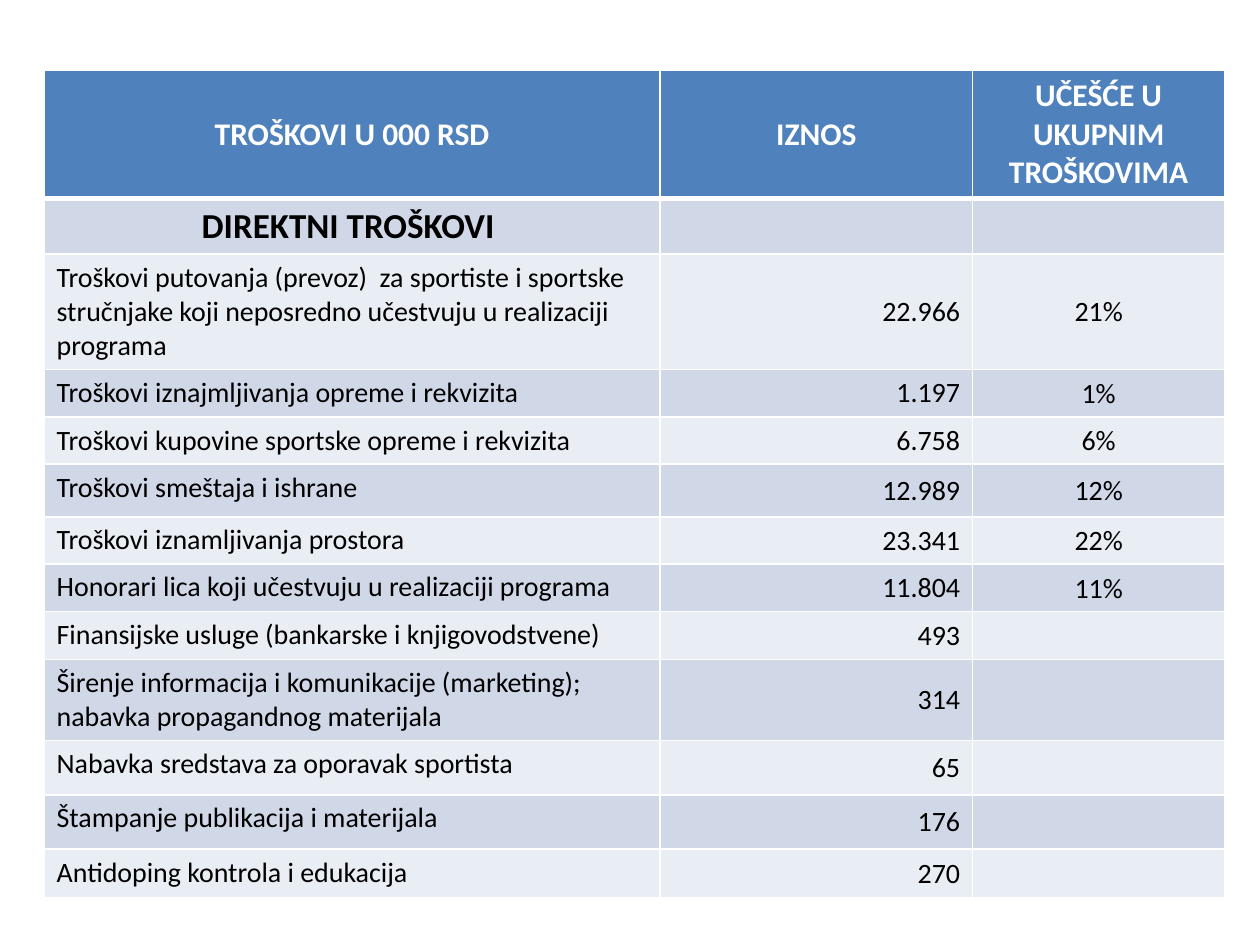
from dataclasses import dataclass

from lxml import etree
from pptx import Presentation
from pptx.dml.color import RGBColor
from pptx.enum.text import MSO_ANCHOR, PP_ALIGN
from pptx.oxml.ns import qn
from pptx.util import Inches, Pt

LEFT, CENTER, RIGHT = PP_ALIGN.LEFT, PP_ALIGN.CENTER, PP_ALIGN.RIGHT
TOP, MIDDLE = MSO_ANCHOR.TOP, MSO_ANCHOR.MIDDLE
BLANK_LAYOUT = 6


@dataclass(frozen=True)
class Theme:
    font: str = "Calibri"
    header_size: int = 18
    section_size: int = 20
    body_size: int = 16
    header_fill: str = "4F81BD"
    bands: tuple = ("D0D8E8", "E9EDF4")
    light: str = "FFFFFF"
    dark: str = "000000"
    border: float = 1
    header_border: float = 3


HEADERS = ["TROŠKOVI U 000 RSD", "IZNOS", "UČEŠĆE U UKUPNIM TROŠKOVIMA"]
SECTION = ["DIREKTNI TROŠKOVI ", "", ""]
COSTS = [
    ["Troškovi putovanja (prevoz)  za sportiste i sportske stručnjake "
     "koji neposredno učestvuju u realizaciji programa", "22.966", "21%"],
    ["Troškovi iznajmljivanja opreme i rekvizita", "1.197", "1%"],
    ["Troškovi kupovine sportske opreme i rekvizita", "6.758", "6%"],
    ["Troškovi smeštaja i ishrane", "12.989", "12%"],
    ["Troškovi iznamljivanja prostora", "23.341", "22%"],
    ["Honorari lica koji učestvuju u realizaciji programa", "11.804", "11%"],
    ["Finansijske usluge (bankarske i knjigovodstvene)", "493", ""],
    ["Širenje informacija i komunikacije (marketing); "
     "nabavka propagandnog materijala", "314", ""],
    ["Nabavka sredstava za oporavak sportista", "65", ""],
    ["Štampanje publikacija i materijala", "176", ""],
    ["Antidoping kontrola i edukacija", "270", ""],
]
COLUMN_WIDTHS = [4.89, 2.48, 2]
ROW_HEIGHTS = [0.95, 0.41, 0.86, 0.38, 0.31, 0.42, 0.35,
               0.38, 0.38, 0.6, 0.43, 0.43, 0.39]


def set_attributes(target, values):
    for name, value in values.items():
        setattr(target, name, value)


class SlideBuilder:
    def __init__(self, slide, theme):
        self.slide = slide
        self.theme = theme

    def add_table(self, rows, left, top, widths, heights):
        frame = self.slide.shapes.add_table(
            len(rows), len(widths), Inches(left), Inches(top),
            Inches(sum(widths)), Inches(sum(heights)))
        table = frame.table
        set_attributes(table, {"first_row": False, "horz_banding": False})
        for column, width in zip(table.columns, widths):
            column.width = Inches(width)
        for row, height in zip(table.rows, heights):
            row.height = Inches(height)
        for row_index, texts in enumerate(rows):
            for column_index, text in enumerate(texts):
                self.format_cell(table.cell(row_index, column_index),
                                 text, row_index, column_index)

    def format_cell(self, cell, text, row, column):
        theme = self.theme
        # Borders come before the fill in the cell properties
        self.add_borders(cell, row)
        cell.fill.solid()
        fill = theme.header_fill if row == 0 else theme.bands[(row - 1) % 2]
        cell.fill.fore_color.rgb = RGBColor.from_string(fill)

        paragraph = cell.text_frame.paragraphs[0]
        if not text:
            # An empty cell must not stretch its row
            etree.SubElement(paragraph._p, qn("a:endParaRPr"),
                             sz=str(theme.body_size * 100))
            return

        size = {0: theme.header_size, 1: theme.section_size}.get(
            row, theme.body_size)
        color = theme.light if row == 0 else theme.dark
        paragraph.alignment = CENTER if row < 2 else (LEFT, RIGHT, CENTER)[column]
        cell.vertical_anchor = MIDDLE if row == 0 or column > 0 else TOP
        if row > 1 and column == 2:
            set_attributes(cell, {
                "margin_left": Inches(0.01), "margin_right": Inches(0.01),
                "margin_top": Inches(0.01), "margin_bottom": 0})
        run = paragraph.add_run()
        run.text = text
        set_attributes(run.font, {
            "name": theme.font, "size": Pt(size), "bold": row < 2})
        run.font.color.rgb = RGBColor.from_string(color)

    def add_borders(self, cell, row):
        properties = cell._tc.get_or_add_tcPr()
        for side in ("L", "R", "T", "B"):
            below_header = (row, side) in ((0, "B"), (1, "T"))
            width = self.theme.header_border if below_header else self.theme.border
            line = etree.SubElement(properties, qn(f"a:ln{side}"), w=str(Pt(width)))
            fill = etree.SubElement(line, qn("a:solidFill"))
            etree.SubElement(fill, qn("a:srgbClr"), val=self.theme.light)


def main():
    presentation = Presentation()
    set_attributes(presentation, {
        "slide_width": Inches(10), "slide_height": Inches(7.5)})
    slide = presentation.slides.add_slide(
        presentation.slide_layouts[BLANK_LAYOUT])

    # Cost table
    builder = SlideBuilder(slide, Theme())
    builder.add_table([HEADERS, SECTION, *COSTS], 0.35, 0.56,
                      COLUMN_WIDTHS, ROW_HEIGHTS)
    presentation.save("out.pptx")


if __name__ == "__main__":
    main()
